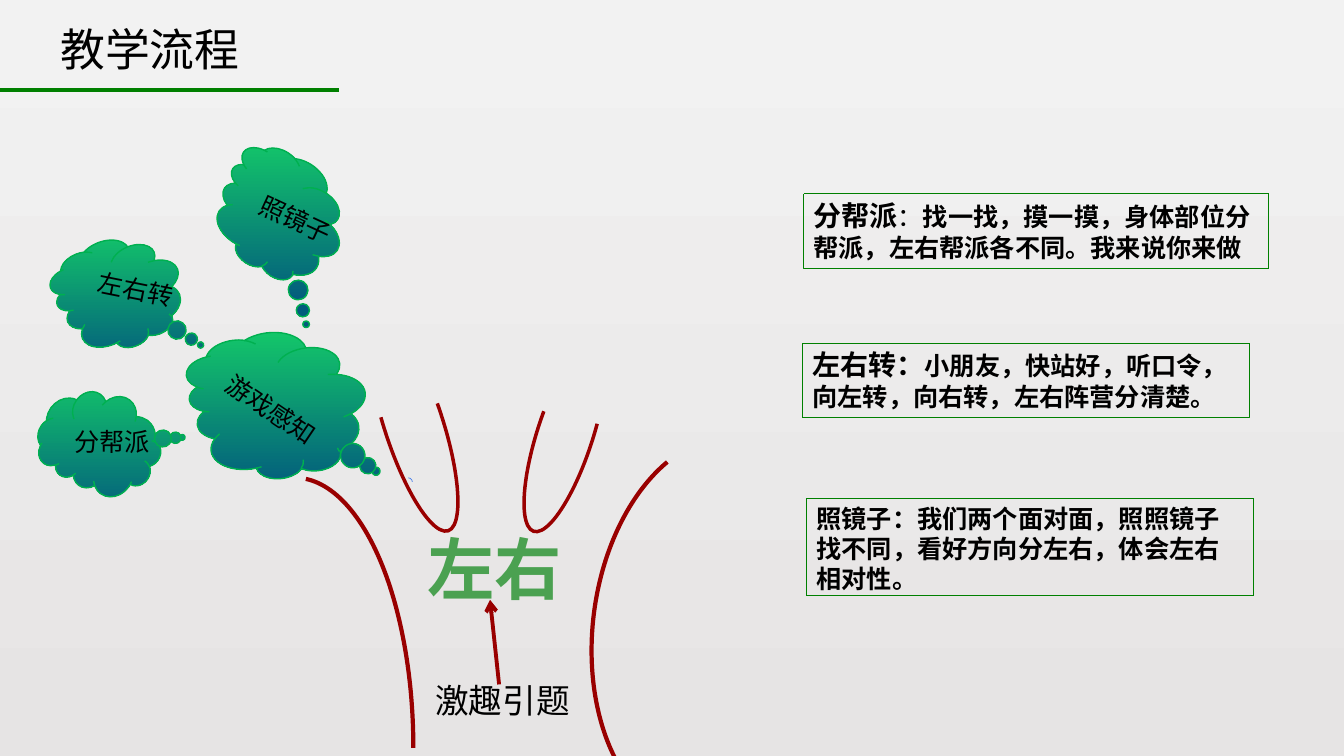
from dataclasses import dataclass

from lxml import etree
from pptx import Presentation
from pptx.dml.color import RGBColor
from pptx.enum.dml import MSO_LINE
from pptx.enum.shapes import MSO_CONNECTOR, MSO_SHAPE
from pptx.enum.text import MSO_ANCHOR, MSO_AUTO_SIZE, PP_ALIGN
from pptx.oxml.ns import qn
from pptx.util import Inches, Pt

ARC = MSO_SHAPE.ARC
CLOUD = MSO_SHAPE.CLOUD_CALLOUT
RECTANGLE = MSO_SHAPE.RECTANGLE
STRAIGHT = MSO_CONNECTOR.STRAIGHT
DOTTED = MSO_LINE.ROUND_DOT
TOP = MSO_ANCHOR.TOP
GROW = MSO_AUTO_SIZE.SHAPE_TO_FIT_TEXT
LEFT, CENTER = PP_ALIGN.LEFT, PP_ALIGN.CENTER

Box = tuple[float, float, float, float]
Point = tuple[float, float]


@dataclass(frozen=True)
class Theme:
    background: tuple[str, ...] = ("F2F2F2", "E6E4E4")
    cloud: tuple[str, ...] = ("14CD68", "035C7D")
    topic: tuple[str, ...] = ("265029", "4BA151", "8FCB93")
    cloud_line: str = "00B050"
    trunk: str = "990000"
    bud: str = "477DEA"
    rule: str = "008000"
    text: str = "000000"
    latin: str = "Arial"
    chinese: str = "Noto Sans CJK SC"
    topic_size: float = 48
    title_size: float = 32
    intro_size: float = 24
    lead_size: float = 20
    body_size: float = 18


THEME = Theme()


@dataclass(frozen=True)
class Branch:
    box: Box
    rotation: float
    color: str
    width: float
    angles: Point | None = None


@dataclass(frozen=True)
class Span:
    text: str
    size: float
    font: str = THEME.latin
    bold: bool = False
    gradient: tuple[str, ...] = ()


@dataclass(frozen=True)
class Label:
    box: Box
    span: Span
    rotation: float = 0
    wrap: bool = True
    alignment: PP_ALIGN = LEFT


@dataclass(frozen=True)
class Thought:
    box: Box
    rotation: float
    tail: Point
    label: Label


@dataclass(frozen=True)
class Note:
    box: Box
    spans: tuple[Span, ...]


BRANCHES = (
    Branch((1.75, 4.74, 2.35, 5.36), 0, THEME.trunk, 3, (163.4, 0)),
    Branch((5.88, 4.32, 2.48, 3.85), 187, THEME.trunk, 3, (180.93, 39.72)),
    Branch((3.81, 3.09, 0.58, 2.23), 162, THEME.trunk, 2.5, (94.41, 17.7)),
    Branch((5.33, 3.3, 0.55, 2.02), 198, THEME.trunk, 2.5, (86.15, 17.7)),
    Branch((4.01, 4.74, 0.08, 0.08), 0, THEME.bud, 0.5),
)
THOUGHTS = (
    Thought((2.03, 3.15, 1.45, 1.74), 263, (-0.53, 0.51),
            Label((2.09, 3.86, 1.2, 0.4), Span("游戏感知", THEME.body_size), 34, False)),
    Thought((2.2, 1.48, 1.17, 1.31), 302.9, (-0.66, 0.61),
            Label((2.44, 2.06, 1.35, 0.4), Span("照镜子", THEME.body_size), 24.9)),
    Thought((0.64, 2.29, 1.09, 1.24), 248.3, (-0.71, 0.45),
            Label((0.87, 2.71, 1.36, 0.4), Span("左右转", THEME.body_size), 11.3)),
    Thought((0.4, 3.88, 1.19, 1.01), 216, (-0.53, 0.51),
            Label((0.64, 4.18, 0.95, 0.4), Span("分帮派", THEME.body_size), wrap=False)),
)
LABELS = (
    Label((3.94, 5.18, 1.93, 0.89),
          Span("左右", THEME.topic_size, bold=True, gradient=THEME.topic), alignment=CENTER),
    Label((4.22, 6.7, 1.53, 0.5), Span("激趣引题", THEME.intro_size), wrap=False),
    Label((0.5, 0.17, 3.02, 0.63), Span("教学流程", THEME.title_size, THEME.chinese)),
)
NOTES = (
    Note((7.97, 1.92, 4.61, 0.74), (
        Span("分帮派", THEME.lead_size, bold=True),
        Span("：", THEME.body_size),
        Span("找一找，摸一摸，身体部位分帮派，左右帮派各不同。我来说你来做",
             THEME.body_size, THEME.chinese, True))),
    Note((7.96, 3.4, 4.43, 0.74), (
        Span("左右转：", THEME.lead_size, bold=True),
        Span("小朋友，快站好，听口令，向左转，向右转，左右阵营分清楚。",
             THEME.body_size, THEME.chinese, True))),
    Note((8, 4.94, 4.43, 0.97), (
        Span("照镜子：", THEME.body_size, bold=True),
        Span("我们两个面对面，照照镜子找不同，看好方向分左右，体会左右相对性。",
             THEME.body_size, THEME.chinese, True))),
)


def paint_gradient(fill, owner, colors: tuple[str, ...]) -> None:
    fill.gradient()
    fill.gradient_angle = 270
    gradient = next(owner.iter(qn("a:gradFill")))
    gradient.set("rotWithShape", "0")
    stops = gradient.find(qn("a:gsLst"))
    for stop in list(stops):
        stops.remove(stop)
    for index, color in enumerate(colors):
        position = 100000 * index // (len(colors) - 1)
        stop = etree.SubElement(stops, qn("a:gs"), pos=str(position))
        etree.SubElement(stop, qn("a:srgbClr"), val=color)


def set_line(line, color: str, width: float) -> None:
    line.color.rgb = RGBColor.from_string(color)
    line.width = Pt(width)


def add_outline(shapes, kind: MSO_SHAPE, box: Box, color: str, width: float):
    shape = shapes.add_shape(kind, *map(Inches, box))
    shape.shadow.inherit = False
    shape.fill.background()
    set_line(shape.line, color, width)
    return shape


def write_spans(shape, spans: tuple[Span, ...], wrap: bool = True,
                alignment: PP_ALIGN = LEFT) -> None:
    frame = shape.text_frame
    frame.word_wrap = wrap
    frame.auto_size = GROW
    frame.vertical_anchor = TOP
    paragraph = frame.paragraphs[0]
    paragraph.alignment = alignment
    for span in spans:
        run = paragraph.add_run()
        run.text = span.text
        run.font.name = span.font
        run.font.size = Pt(span.size)
        run.font.bold = span.bold
        if span.gradient:
            paint_gradient(run.font.fill, run._r, span.gradient)
        else:
            run.font.color.rgb = RGBColor.from_string(THEME.text)


def add_label(shapes, label: Label) -> None:
    shape = shapes.add_textbox(*map(Inches, label.box))
    shape.rotation = label.rotation
    write_spans(shape, (label.span,), label.wrap, label.alignment)


def add_branch(shapes, branch: Branch) -> None:
    shape = add_outline(shapes, ARC, branch.box, branch.color, branch.width)
    shape.rotation = branch.rotation
    if branch.angles:
        shape.adjustments[0], shape.adjustments[1] = branch.angles


def add_thought(shapes, thought: Thought) -> None:
    group = shapes.add_group_shape()
    cloud = add_outline(group.shapes, CLOUD, thought.box, THEME.cloud_line, 1)
    cloud.rotation = thought.rotation
    cloud.adjustments[0], cloud.adjustments[1] = thought.tail
    paint_gradient(cloud.fill, cloud._element, THEME.cloud)
    add_label(group.shapes, thought.label)


def add_note(shapes, note: Note) -> None:
    shape = add_outline(shapes, RECTANGLE, note.box, THEME.rule, 0.25)
    shape.line.dash_style = DOTTED
    write_spans(shape, note.spans)


def add_line(shapes, start: Point, end: Point, color: str, arrow: bool = False) -> None:
    connector = shapes.add_connector(STRAIGHT, *map(Inches, start + end))
    set_line(connector.line, color, 2.75)
    if arrow:
        etree.SubElement(connector.line._get_or_add_ln(), qn("a:tailEnd"), type="arrow")
    etree.SubElement(connector._element.spPr, qn("a:effectLst"))


def main() -> None:
    presentation = Presentation()
    presentation.slide_width = Inches(13.33)
    presentation.slide_height = Inches(7.5)
    slide = presentation.slides.add_slide(presentation.slide_layouts[6])
    paint_gradient(slide.background.fill, slide._element, THEME.background)
    shapes = slide.shapes
    for branch in BRANCHES:
        add_branch(shapes, branch)
    for thought in THOUGHTS:
        add_thought(shapes, thought)
    for label in LABELS:
        add_label(shapes, label)
    add_line(shapes, (4.95, 6.79), (4.86, 5.95), THEME.trunk, arrow=True)
    for note in NOTES:
        add_note(shapes, note)
    add_line(shapes, (0, 0.89), (3.36, 0.89), THEME.rule)
    presentation.save("out.pptx")


if __name__ == "__main__":
    main()
